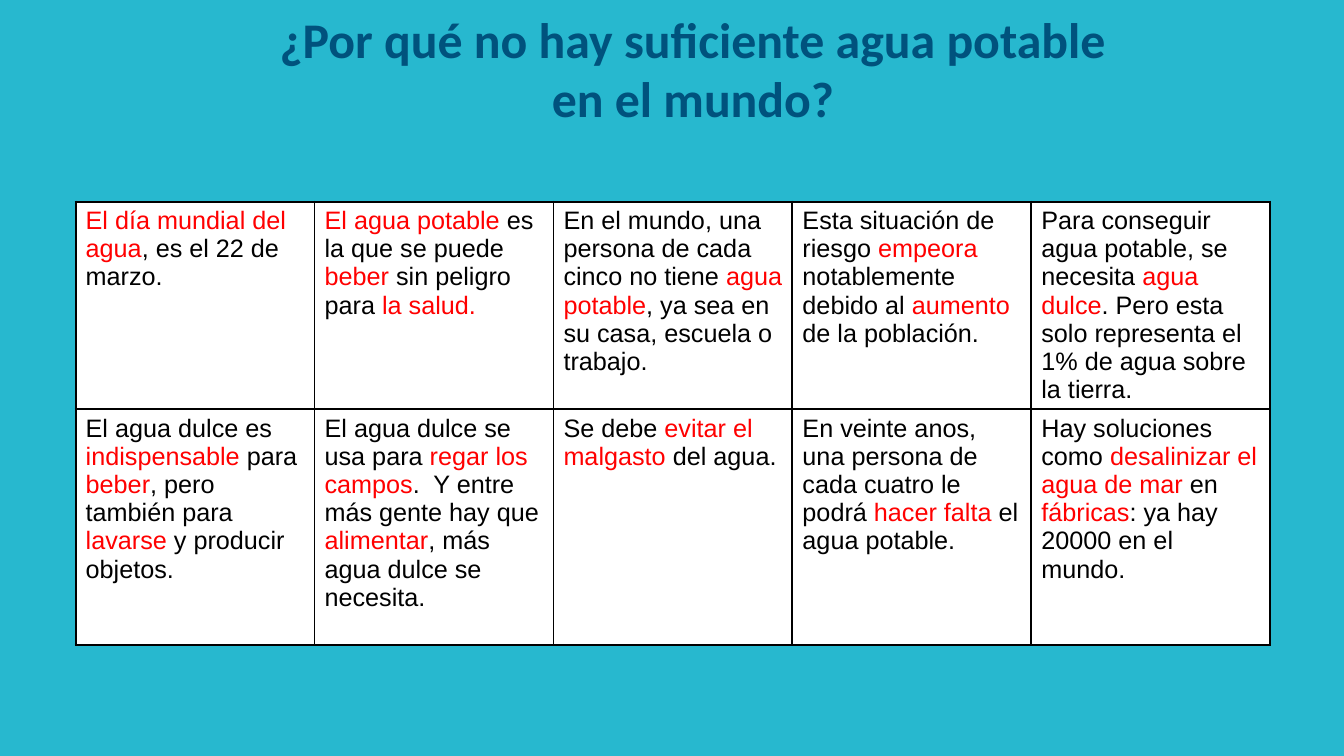
from dataclasses import dataclass
from lxml import etree
from pptx import Presentation
from pptx.dml.color import RGBColor
from pptx.enum.text import MSO_ANCHOR, MSO_AUTO_SIZE, PP_ALIGN
from pptx.oxml.ns import qn
from pptx.util import Inches, Pt

MIDDLE = MSO_ANCHOR.MIDDLE
NO_FIT = MSO_AUTO_SIZE.NONE
CENTER = PP_ALIGN.CENTER

TITLE = "¿Por qué no hay suficiente agua potable en el mundo?"
MARK = "|"
FACTS = [
    [
        "|El día mundial del agua|, es el 22 de marzo.",
        "|El agua potable| es la que se puede |beber| sin peligro para |la salud.|",
        "En el mundo, una persona de cada cinco no tiene |agua potable|, "
        "ya sea en su casa, escuela o trabajo.",
        "Esta situación de riesgo |empeora |notablemente debido al |aumento| de la población.",
        "Para conseguir agua potable, se necesita |agua dulce|. "
        "Pero esta solo representa el 1% de agua sobre la tierra.",
    ],
    [
        "El agua dulce es |indispensable| para |beber|, pero también para |lavarse| "
        "y producir objetos.",
        "El agua dulce se usa para |regar los campos|.  Y entre más gente hay que "
        "|alimentar|, más agua dulce se necesita.",
        "Se debe |evitar el malgasto| del agua.",
        "En veinte anos, una persona de cada cuatro le podrá |hacer falta |el agua potable.",
        "Hay soluciones como |desalinizar el agua de mar| en |fábricas|: "
        "ya hay 20000 en el mundo.",
    ],
]
TITLE_BOX = (2.5, 0.05, 8.75, 1.25)
TABLE_LEFT, TABLE_TOP = 0.75, 2
COL_WIDTH = 2.37
ROW_HEIGHTS = (2.06, 2.34)


@dataclass(frozen=True)
class Theme:
    background: str = "27B8CF"
    title: str = "00527D"
    text: str = "000000"
    highlight: str = "FF0000"
    cell: str = "FFFFFF"
    border: str = "000000"
    title_font: str = "Calibri"
    body_font: str = "Arial"
    title_size: float = 35.6
    body_size: float = 18
    border_width: float = 1.5


THEME = Theme()


def style(r, font, size, color, bold):
    r.font.name = font
    r.font.size = Pt(size)
    r.font.bold = bold
    r.font.color.rgb = RGBColor.from_string(color)


def add_borders(cell):
    tc_pr = cell._tc.get_or_add_tcPr()
    for i, side in enumerate(("a:lnL", "a:lnR", "a:lnT", "a:lnB")):
        ln = etree.Element(qn(side), w=str(Pt(THEME.border_width)))
        fill = etree.SubElement(ln, qn("a:solidFill"))
        etree.SubElement(fill, qn("a:srgbClr"), val=THEME.border)
        tc_pr.insert(i, ln)


def fill_cell(cell, fact):
    cell.fill.solid()
    cell.fill.fore_color.rgb = RGBColor.from_string(THEME.cell)
    add_borders(cell)
    p = cell.text_frame.paragraphs[0]
    for i, part in enumerate(fact.split(MARK)):
        if part:
            r = p.add_run()
            r.text = part
            color = THEME.highlight if i % 2 else THEME.text
            style(r, THEME.body_font, THEME.body_size, color, False)


def add_title(s):
    sp = s.shapes.title
    sp.left, sp.top, sp.width, sp.height = map(Inches, TITLE_BOX)
    tf = sp.text_frame
    tf.text = TITLE
    tf.word_wrap = True
    tf.auto_size = NO_FIT
    tf.vertical_anchor = MIDDLE
    p = tf.paragraphs[0]
    p.alignment = CENTER
    style(p.runs[0], THEME.title_font, THEME.title_size, THEME.title, True)


def add_facts(s):
    rows, cols = len(FACTS), len(FACTS[0])
    table = s.shapes.add_table(
        rows, cols, Inches(TABLE_LEFT), Inches(TABLE_TOP),
        Inches(cols * COL_WIDTH), Inches(sum(ROW_HEIGHTS)),
    ).table
    table.first_row = table.horz_banding = False
    for col in table.columns:
        col.width = Inches(COL_WIDTH)
    for row, height, facts in zip(table.rows, ROW_HEIGHTS, FACTS):
        row.height = Inches(height)
        for cell, fact in zip(row.cells, facts):
            fill_cell(cell, fact)


def main():
    prs = Presentation()
    prs.slide_width, prs.slide_height = Inches(13.33), Inches(7.5)
    s = prs.slides.add_slide(prs.slide_layouts.get_by_name("Title Only"))
    s.background.fill.solid()
    s.background.fill.fore_color.rgb = RGBColor.from_string(THEME.background)
    add_title(s)
    add_facts(s)
    prs.save("out.pptx")


if __name__ == "__main__":
    main()
